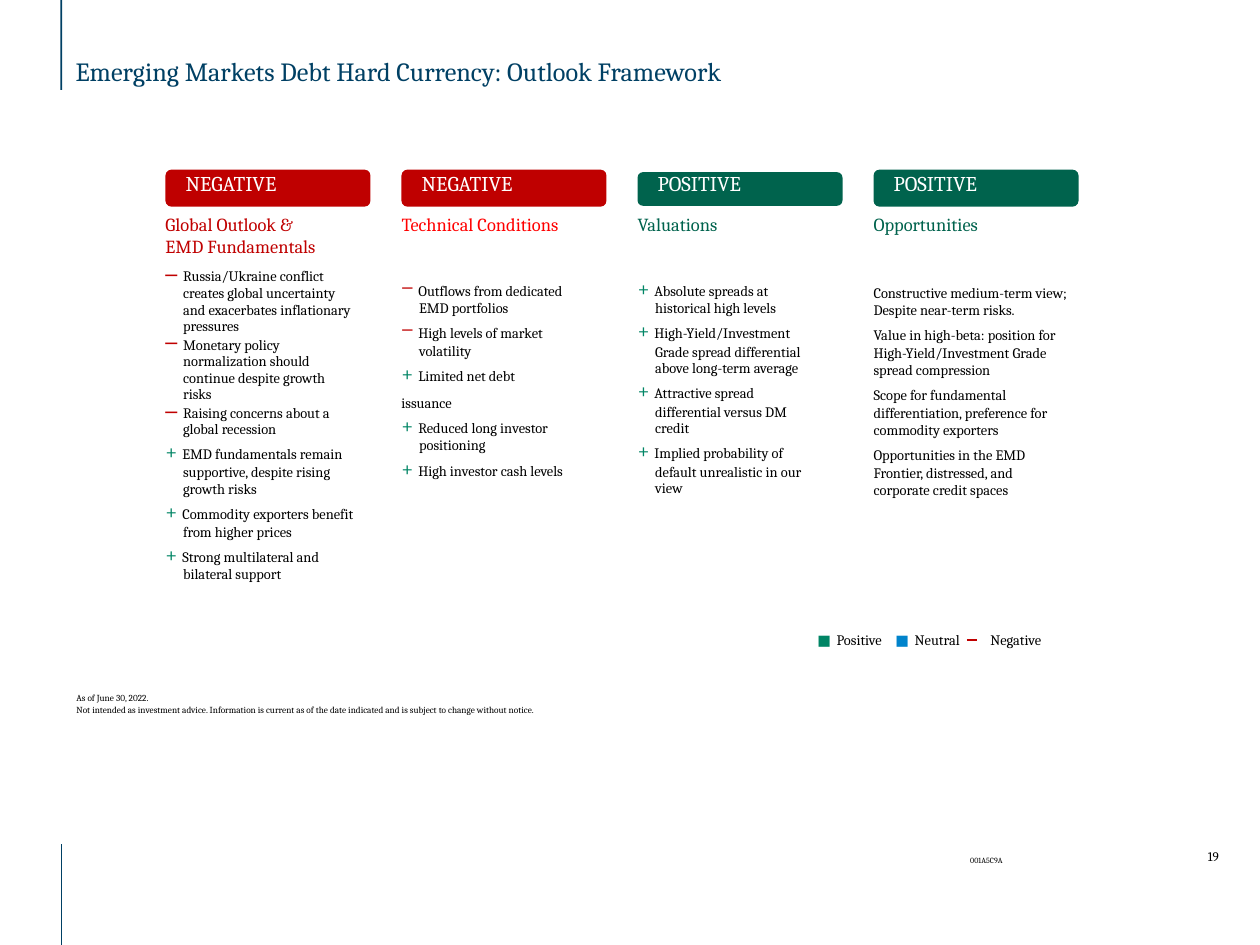
from lxml import etree
from pptx import Presentation
from pptx.dml.color import RGBColor
from pptx.enum import shapes, text
from pptx.oxml import ns
from pptx.util import Inches, Pt

NAVY = RGBColor(0x00, 0x40, 0x64)
RED = RGBColor(0xBF, 0x00, 0x00)
DASH_RED = RGBColor(0xC0, 0x00, 0x00)
BRIGHT_RED = RGBColor(0xFF, 0x00, 0x00)
PILL_GREEN = RGBColor(0x00, 0x63, 0x4D)
PLUS_GREEN = RGBColor(0x00, 0x85, 0x65)
BLUE = RGBColor(0x00, 0x83, 0xCB)
WHITE = RGBColor(0xFF, 0xFF, 0xFF)
BLACK = RGBColor(0, 0, 0)

FONT = "Cambria"
BODY_SIZE, MARK_SIZE = 12.4, 18.6
COLUMN_LEFT, COLUMN_PITCH, PILL_WIDTH = 1.97, 2.81, 2.44
BULLET, DASH, PLUS = "–", "‒ ", "+ "

# Each column: label, pill colour, pill top and height, heading, heading colour,
# body box (width, top, height; None continues below the heading), points.
COLUMNS = [
    ("NEGATIVE", RED, 2.02, 0.44, "Global Outlook &\vEMD Fundamentals", DASH_RED, None, [
        (BULLET, "Russia/Ukraine conflict\ncreates global uncertainty\n"
                 "and exacerbates inflationary\npressures"),
        (BULLET, "Monetary policy\nnormalization should\ncontinue despite growth\nrisks"),
        (BULLET, "Raising concerns about a\nglobal recession"),
        (PLUS, "EMD fundamentals remain\nsupportive, despite rising\ngrowth risks"),
        (PLUS, "Commodity exporters benefit\nfrom higher prices"),
        (PLUS, "Strong multilateral and\nbilateral support"),
    ]),
    ("NEGATIVE", RED, 2.02, 0.44, "Technical Conditions", BRIGHT_RED, (2.3, 3.26, 2.57), [
        (DASH, "Outflows from dedicated\nEMD portfolios"),
        (DASH, "High levels of market\nvolatility"),
        (PLUS, "Limited net debt\nissuance", Pt(21.9)),
        (PLUS, "Reduced long investor\npositioning"),
        (PLUS, "High investor cash levels"),
    ]),
    ("POSITIVE", PILL_GREEN, 2.05, 0.4, "Valuations", PILL_GREEN, (2.26, 3.26, 3.16), [
        (PLUS, "Absolute spreads at\nhistorical high levels"),
        (PLUS, "High-Yield/Investment\nGrade spread differential\nabove long-term average"),
        (PLUS, "Attractive spread\ndifferential versus DM\ncredit"),
        (PLUS, "Implied probability of\ndefault unrealistic in our\nview"),
    ]),
    ("POSITIVE", PILL_GREEN, 2.02, 0.44, "Opportunities", PILL_GREEN, (2.66, 3.34, 3.12), [
        ("", "Constructive medium-term view;\nDespite near-term risks."),
        ("", "Value in high-beta: position for\nHigh-Yield/Investment Grade\nspread compression"),
        ("", "Scope for fundamental\ndifferentiation, preference for\ncommodity exporters"),
        ("", "Opportunities in the EMD\nFrontier, distressed, and\ncorporate credit spaces"),
    ]),
]


def add_frame(page, left, top, width, height, inset=0.0):
    box = page.shapes.add_textbox(Inches(left), Inches(top), Inches(width), Inches(height))
    frame = box.text_frame
    frame.word_wrap = True
    frame.margin_left = frame.margin_right = frame.margin_bottom = 0
    frame.margin_top = Inches(inset)
    return frame


def next_para(frame):
    """Return the still empty first paragraph, or a new one."""
    first = frame.paragraphs[0]
    return frame.add_paragraph() if first.runs else first


def set_indent(para, left, hanging=0.0):
    props = para._p.get_or_add_pPr()
    props.set("marL", str(Inches(left)))
    props.set("indent", str(-Inches(hanging)))
    return props


def add_child(parent, tag, **attributes):
    return etree.SubElement(parent, ns.qn(tag), attributes)


def set_font(font, size, color):
    font.name, font.size = FONT, Pt(size)
    font.color.rgb = color


def add_line(frame, words, size, color, left=0.02, before=0.0):
    para = next_para(frame)
    para.text = words
    set_indent(para, left)
    if before:
        para.space_before = Pt(before)
    set_font(para.font, size, color)
    return para


def add_point(frame, mark, words, exact=None):
    """Add a point led by a typed mark, a bullet, or nothing."""
    is_first = not frame.paragraphs[0].runs
    para = next_para(frame)
    lines = words.split("\n")
    hangs = mark and exact is None and len(lines) > 1
    props = set_indent(para, 0.23, 0.21) if hangs else set_indent(para, 0.02)
    if not mark:
        before = 6.8
    elif not hangs:
        before = 0.6
    else:
        before = 2.3 if len(lines) == 2 else 1.5
        para.line_spacing = 0.92 if len(lines) == 2 else 0.96
    if exact:
        para.line_spacing = exact
    if not is_first:
        para.space_before = Pt(before)
    if mark == BULLET:
        add_child(add_child(props, "a:buClr"), "a:srgbClr", val=str(DASH_RED))
        add_child(props, "a:buSzPct", val="150000")
        add_child(props, "a:buChar", char=BULLET)
    elif mark:
        sign = para.add_run()
        sign.text = mark
        set_font(sign.font, MARK_SIZE, PLUS_GREEN if mark == PLUS else DASH_RED)
    set_font(para.font, BODY_SIZE, BLACK)
    for number, line in enumerate(lines):
        if number:
            para.add_line_break()
        para.add_run().text = line
    return para


def add_column(page, left, label, fill, top, height, heading, heading_color, body, points):
    pill = page.shapes.add_shape(shapes.MSO_SHAPE.ROUNDED_RECTANGLE, Inches(left),
                                 Inches(top), Inches(PILL_WIDTH), Inches(height))
    pill.adjustments[0] = 0.16
    pill.shadow.inherit = False
    pill.fill.solid()
    pill.fill.fore_color.rgb = fill
    pill.line.fill.background()

    text_left = left - 0.02
    frame = add_frame(page, text_left, 2.02, 2.39, 0.94 if body else 5.88, 0.01)
    add_line(frame, label, 18, WHITE, left=0.26)
    add_line(frame, heading, 15.8, heading_color, before=15.1)
    if body:
        width, body_top, body_height = body
        frame = add_frame(page, text_left, body_top, width, body_height, 0.04)
    paras = [add_point(frame, *point) for point in points]
    if not body:
        paras[0].space_before = Pt(9.4)


def add_rule(page, x1, y1, x2, y2, color, weight):
    rule = page.shapes.add_connector(shapes.MSO_CONNECTOR.STRAIGHT, Inches(x1),
                                     Inches(y1), Inches(x2), Inches(y2))
    rule.line.color.rgb = color
    rule.line.width = Pt(weight)
    add_child(rule._element.spPr, "a:effectLst")


def add_legend(page, left, top):
    para = add_frame(page, left, top, 3, 0.25).paragraphs[0]
    stops = add_child(para._p.get_or_add_pPr(), "a:tabLst")
    for stop in (0.23, 0.93, 1.16, 2.06):
        add_child(stops, "a:tab", pos=str(Inches(stop)), algn="l")
    set_font(para.font, BODY_SIZE, BLACK)
    for words, color in (("■", PLUS_GREEN), ("\tPositive\t", BLACK),
                         ("■", BLUE), ("\tNeutral\tNegative", BLACK)):
        span = para.add_run()
        span.text = words
        set_font(span.font, BODY_SIZE, color)
    add_rule(page, left + 1.78, top + 0.11, left + 1.9, top + 0.11, DASH_RED, 2.25)


def add_header(page):
    bar = page.shapes.add_shape(shapes.MSO_SHAPE.RECTANGLE, Inches(0.72), 0,
                                Inches(0.02), Inches(1.07))
    bar.shadow.inherit = False
    bar.fill.solid()
    bar.fill.fore_color.rgb = NAVY
    bar.line.fill.background()
    title = add_frame(page, 0.88, 0.64, 10.03, 0.39, 0.02)
    add_line(title, "Emerging Markets Debt Hard Currency: Outlook Framework", 22.5, NAVY)


def add_footer(page):
    notes = add_frame(page, 0.91, 8.02, 13.37, 0.5)
    notes.vertical_anchor = text.MSO_ANCHOR.BOTTOM
    for words in ("As of June 30, 2022.",
                  "Not intended as investment advice. Information is current as of the "
                  "date indicated and is subject to change without notice."):
        para = add_line(notes, words, 7.9, BLACK, left=0)
        para.line_spacing = 0.95
        para.space_after = Pt(1.5)
    add_rule(page, 0.73, 10.05, 0.73, 11.25, NAVY, 1)
    add_line(add_frame(page, 11.53, 10.16, 0.62, 0.13, 0.02), "001A5C9A", 6.8, BLACK)
    add_line(add_frame(page, 14.36, 10.09, 0.2, 0.2, 0.01), "19", 11.2, BLACK)


def main():
    deck = Presentation()
    deck.slide_width, deck.slide_height = Inches(15), Inches(11.25)
    page = deck.slides.add_slide(deck.slide_layouts[6])
    add_header(page)
    for number, column in enumerate(COLUMNS):
        add_column(page, COLUMN_LEFT + number * COLUMN_PITCH, *column)
    add_legend(page, 9.73, 7.51)
    add_footer(page)
    deck.save("out.pptx")


if __name__ == "__main__":
    main()
